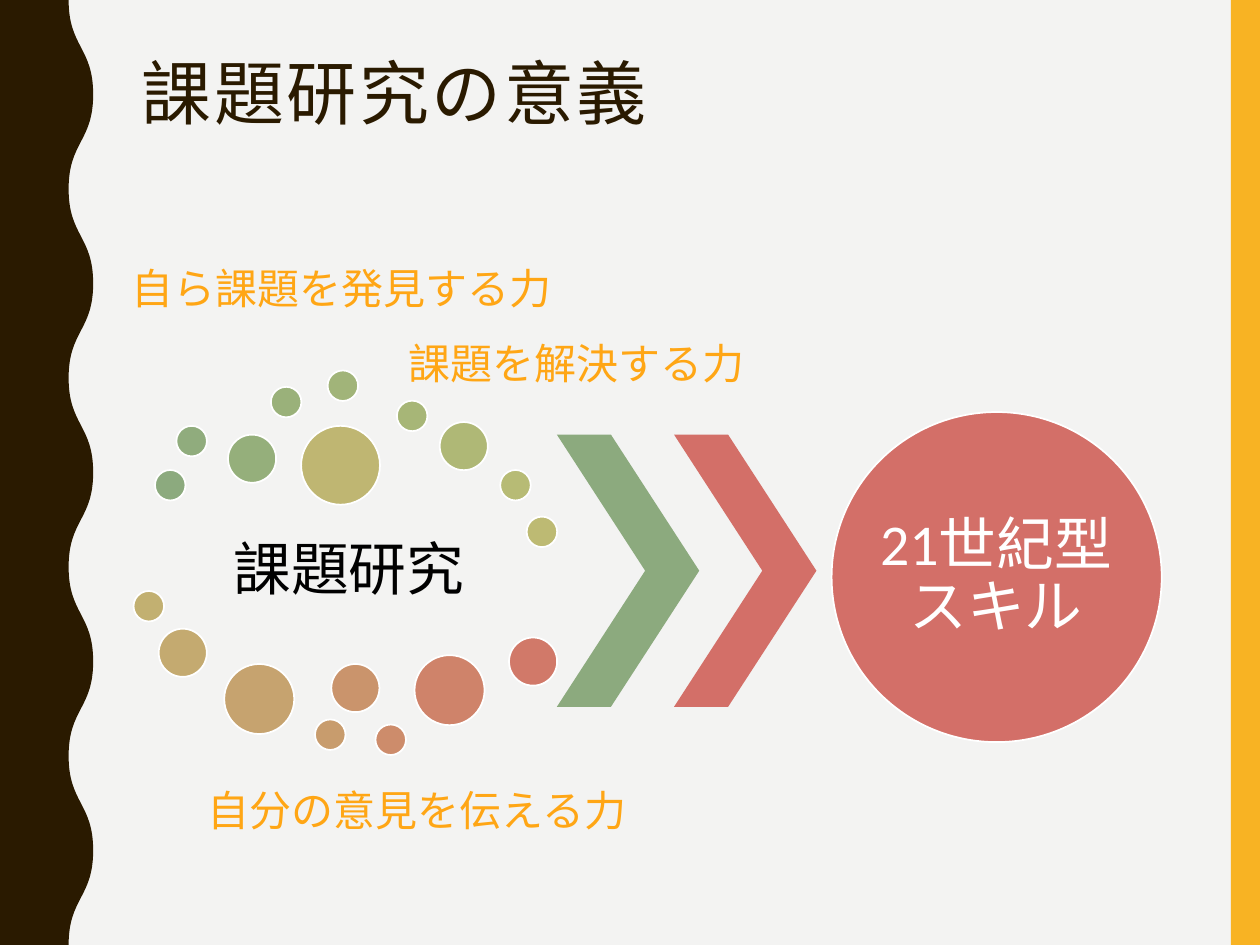
from lxml.etree import SubElement
from pptx import Presentation
from pptx.dml.color import RGBColor
from pptx.enum.shapes import MSO_SHAPE
from pptx.enum.text import MSO_ANCHOR, MSO_AUTO_SIZE, PP_ALIGN
from pptx.oxml.ns import qn
from pptx.util import Inches, Pt

COLOURS = {
    "background": "F3F3F2", "wave": "2A1A00", "stripe": "F8B323",
    "label": "FFA615", "black": "000000", "white": "FFFFFF",
    "green": "8CAA7E", "red": "D36F68",
    "dots": "8CAA7E 90AC7D 95AF7B 9AB17A A1B479 A7B677 AFB876 B7BB75 BDBA73 "
            "BFB672 C2B071 C4AA70 C6A36F C89C6D CA946C CD8C6B CF836A D17969",
}
COLUMNS, ROWS = 100, 75
SMALL, MEDIUM, LARGE, HUGE = 2.42, 3.82, 5.56, 6.26
DOTS = [
    (12.3, 37.3, SMALL), (14, 33.8, SMALL), (18.1, 34.5, MEDIUM),
    (21.5, 30.7, SMALL), (26, 29.4, SMALL), (31.5, 31.8, SMALL),
    (34.9, 33.5, MEDIUM), (39.7, 37.3, SMALL), (41.8, 41, SMALL),
    (23.9, 33.8, HUGE), (10.6, 46.9, SMALL), (12.6, 49.9, MEDIUM),
    (17.8, 52.7, LARGE), (25, 57.1, SMALL), (26.3, 52.7, MEDIUM),
    (29.8, 57.5, SMALL), (32.9, 52, LARGE), (40.4, 50.6, MEDIUM),
]
LABELS = [
    ("自ら課題を発見する力", 9.45, 20.35, 35.7),
    ("課題を解決する力", 31.4, 26.3, 28.9),
    ("自分の意見を伝える力", 15.5, 61.8, 35.7),
]
TITLE = {"size": Pt(40), "name": "Arial Narrow"}
DIAGRAM = {"size": Pt(33), "name": "Calibri"}
LABEL = {"size": Pt(24), "name": "Calibri"}
CENTRED = {"alignment": PP_ALIGN.CENTER, "line_spacing": 0.9}


class SlideStyle:
    """Draws styled elements on one slide, measured in grid columns and rows."""

    def __init__(self, presentation):
        self.column = presentation.slide_width / COLUMNS
        self.row = presentation.slide_height / ROWS
        self.slide = presentation.slides.add_slide(presentation.slide_layouts[6])
        self.paint(self.slide.background.fill, COLOURS["background"])

    def box(self, left, top, width, height):
        return [round(value * unit) for value, unit in
                zip((left, top, width, height), (self.column, self.row) * 2)]

    def paint(self, fill, colour):
        fill.solid()
        fill.fore_color.rgb = RGBColor.from_string(colour)

    def apply(self, target, values):
        for name, value in values.items():
            setattr(target, name, value)

    def finish(self, shape, colour, outlined=False):
        shape.shadow.inherit = False
        self.paint(shape.fill, colour)
        if outlined:
            self.paint(shape.line.fill, COLOURS["white"])
            shape.line.width = Pt(1)
        else:
            shape.line.fill.background()

    def shape(self, kind, place, colour, outlined=False, adjustment=None):
        shape = self.slide.shapes.add_shape(kind, *self.box(*place))
        if adjustment is not None:
            shape.adjustments[0] = adjustment
        self.finish(shape, colour, outlined)

    def circle(self, left, top, size, colour):
        self.shape(MSO_SHAPE.OVAL, (left, top, size, size), colour, True)

    def wave(self, inner, outer, half_waves, colour):
        length = round(ROWS * self.row / half_waves)
        sides = [round(side * self.column) for side in (inner, outer)]
        points = [(sides[index % 2], index * length)
                  for index in range(half_waves + 1)]
        builder = self.slide.shapes.build_freeform(*points[0])
        corners = [(0, half_waves * length), (0, 0)]
        builder.add_line_segments(points[1:] + corners, close=True)
        shape = builder.convert_to_shape()
        lines = list(shape._element.iter(qn("a:lnTo")))
        for line, start, end in zip(lines, points, points[1:]):
            self.curve(line, start, end)
        self.finish(shape, colour)

    def curve(self, line, start, end):
        middle = (start[1] + end[1]) // 2
        bezier = SubElement(line.getparent(), qn("a:cubicBezTo"))
        for across, down in ((start[0], middle), (end[0], middle), end):
            SubElement(bezier, qn("a:pt"), x=str(across), y=str(down))
        line.getparent().replace(line, bezier)

    def text(self, words, place, font, colour, paragraph_format=None, **frame):
        text_frame = self.slide.shapes.add_textbox(*self.box(*place)).text_frame
        self.apply(text_frame, {"word_wrap": True, **frame})
        paragraph = text_frame.paragraphs[0]
        self.apply(paragraph, paragraph_format or {})
        run = paragraph.add_run()
        run.text = words
        self.apply(run.font, font)
        run.font.color.rgb = RGBColor.from_string(colour)
        return run

    def diagram_text(self, words, place, colour, inset):
        margins = {f"margin_{side}": Inches(inset)
                   for side in ("left", "top", "right", "bottom")}
        self.text(words, place, DIAGRAM, colour, CENTRED,
                  vertical_anchor=MSO_ANCHOR.MIDDLE, **margins)


def main():
    presentation = Presentation()
    presentation.slide_width = Inches(10)
    presentation.slide_height = Inches(7.5)
    style = SlideStyle(presentation)

    style.shape(MSO_SHAPE.RECTANGLE, (97.7, 0, 2.3, ROWS), COLOURS["stripe"])
    style.wave(5.45, 7.4, 10, COLOURS["wave"])
    title = style.text("課題研究の意義", (10.25, 4.2, 83.5, 11.8), TITLE,
                       COLOURS["wave"], {"line_spacing": 0.9})
    title.font._element.set("spc", "150")

    style.diagram_text("課題研究", (12.3, 40.3, 30.8, 10.1), COLOURS["black"], 0.05)
    for dot, colour in zip(DOTS, COLOURS["dots"].split()):
        style.circle(*dot, colour)
    for left, name in ((44.2, "green"), (53.5, "red")):
        style.shape(MSO_SHAPE.CHEVRON, (left, 34.5, 11.3, 21.6),
                    COLOURS[name], adjustment=0.62)
    style.circle(66, 32.7, 26.2, COLOURS["red"])
    style.diagram_text("21世紀型スキル", (69.8, 36.6, 18.5, 18.5), COLOURS["white"], 0)

    for words, left, top, width in LABELS:
        style.text(words, (left, top, width, 5), LABEL, COLOURS["label"],
                   word_wrap=False, auto_size=MSO_AUTO_SIZE.SHAPE_TO_FIT_TEXT)
    presentation.save("out.pptx")


if __name__ == "__main__":
    main()
